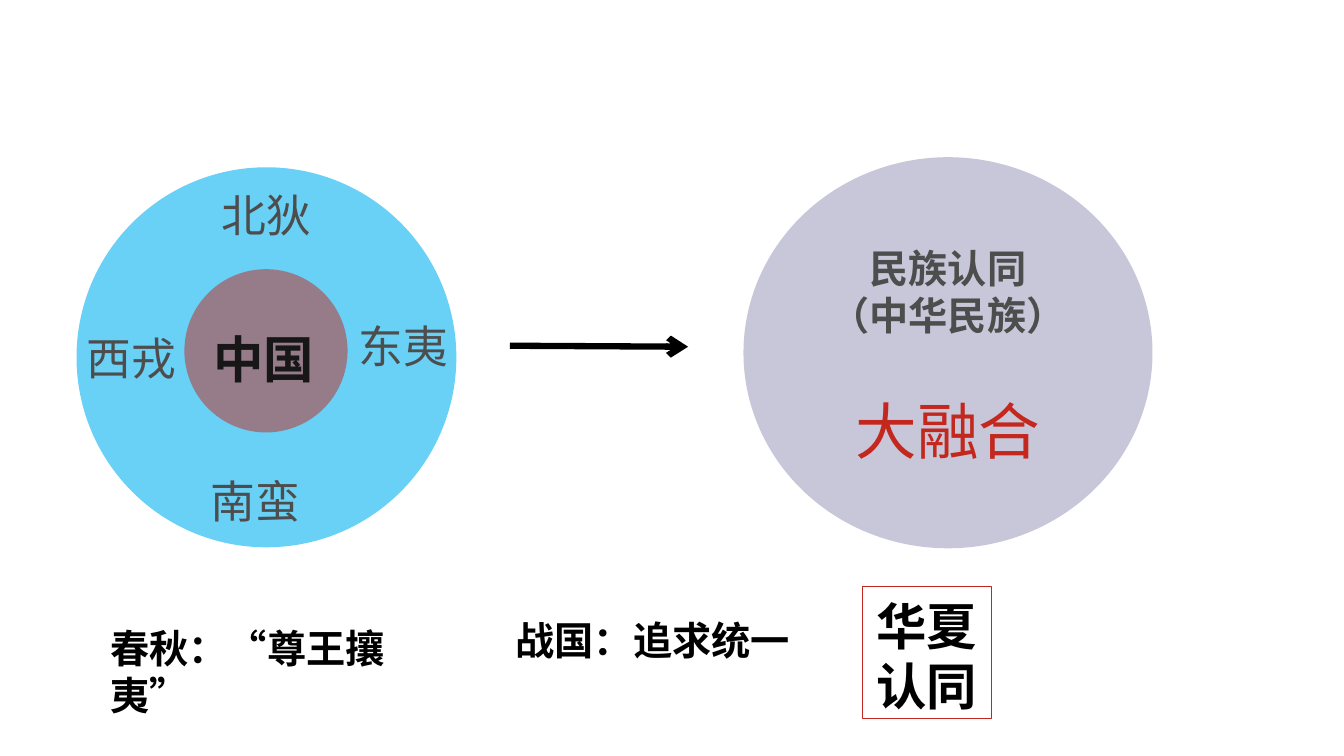
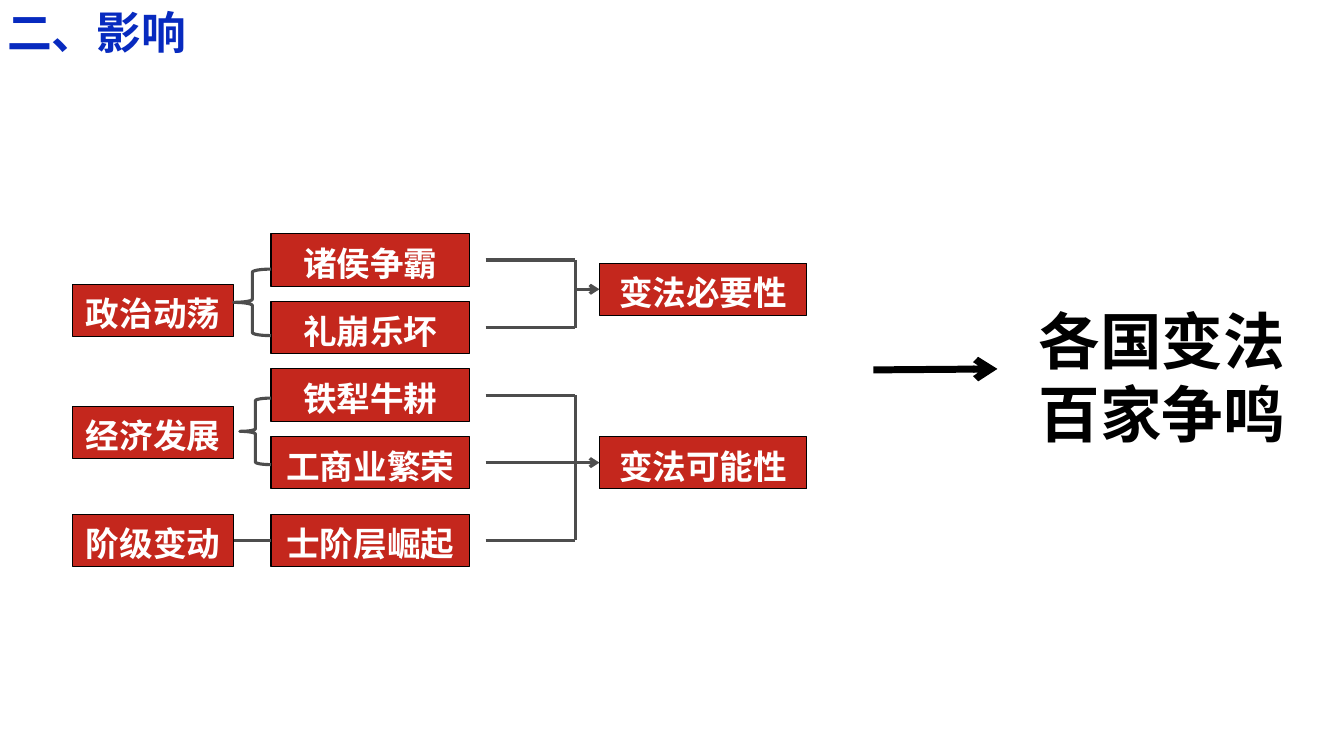
from dataclasses import dataclass

from lxml import etree
from pptx import Presentation
from pptx.dml.color import RGBColor
from pptx.enum.lang import MSO_LANGUAGE_ID
from pptx.enum.shapes import MSO_CONNECTOR, MSO_SHAPE
from pptx.enum.text import MSO_ANCHOR, MSO_AUTO_SIZE, PP_ALIGN
from pptx.oxml.ns import qn
from pptx.util import Inches, Pt

RECT, OVAL, BRACE = MSO_SHAPE.RECTANGLE, MSO_SHAPE.OVAL, MSO_SHAPE.LEFT_BRACE
STRAIGHT = MSO_CONNECTOR.STRAIGHT
LEFT, CENTER = PP_ALIGN.LEFT, PP_ALIGN.CENTER
TOP, MIDDLE = MSO_ANCHOR.TOP, MSO_ANCHOR.MIDDLE
FIXED = MSO_AUTO_SIZE.NONE
CHINESE = MSO_LANGUAGE_ID.SIMPLIFIED_CHINESE
LEFT_SIDE, RIGHT_SIDE = 1, 3


@dataclass(frozen=True)
class Theme:
    red: str = "C4271D"
    blue: str = "072ABF"
    sky: str = "00B0F0"
    lavender: str = "AAAAC6"
    gray: str = "4D4D4D"
    ink: str = "171717"
    black: str = "000000"
    white: str = "FFFFFF"
    cjk: str = "Noto Sans CJK SC"
    latin: str = "Arial"
    box: int = 24
    body: int = 28
    label: int = 32
    core: int = 36
    result: int = 44
    line_height: float = 1.2


THEME = Theme()

PERIODS = [
    ("春秋：“尊王攘夷”", (1, 6.11, 3.63, 1.05)),
    ("战国：追求统一", (5.02, 6.03, 2.99, 0.57)),
]
NEIGHBOURS = [
    ("北狄", 2.1, 1.78),
    ("东夷", 3.46, 3.08),
    ("南蛮", 1.99, 4.62),
    ("西戎", 0.76, 3.2),
]
CHANGES = [("政治动荡", 2.82), ("经济发展", 4.03), ("阶级变动", 5.1)]
FACTORS = [
    ("诸侯争霸", 2.32),
    ("礼崩乐坏", 2.99),
    ("铁犁牛耕", 3.66),
    ("工商业繁荣", 4.33),
    ("士阶层崛起", 5.1),
]
CONDITIONS = [
    ("变法必要性", 2.61, FACTORS[:2]),
    ("变法可能性", 4.33, FACTORS[2:]),
]
BRACES = [(2.32, 2.67, 0.37, 0.66), (2.38, 3.95, 0.31, 0.66)]
CHANGE_X, CHANGE_W = 0.72, 1.6
FACTOR_X, FACTOR_W = 2.69, 1.97
CONDITION_X, CONDITION_W = 5.95, 2.06
BOX_H = 0.52
BRANCH_X, BUS_X = 4.82, 5.71


def rgb(color):
    return RGBColor.from_string(color)


def write(shape, text, size=THEME.body, color=THEME.black, bold=True,
          font=THEME.cjk, align=LEFT, anchor=TOP, before=0, more=False):
    frame = shape.text_frame
    frame.word_wrap, frame.auto_size = True, FIXED
    frame.vertical_anchor = anchor
    frame.margin_left = frame.margin_right = Inches(0.1)
    frame.margin_top, frame.margin_bottom = Inches(0.08), Inches(0.02)
    for index, line in enumerate(text.split("\n")):
        first = index == 0 and not more
        paragraph = frame.paragraphs[0] if first else frame.add_paragraph()
        paragraph.alignment = align
        paragraph.line_spacing = Pt(round(size * THEME.line_height, 1))
        paragraph.space_before = Pt(before)
        run = paragraph.add_run()
        run.text = line
        run.font.size, run.font.bold = Pt(size), bold
        run.font.color.rgb = rgb(color)
        run.font.name = font
        run.font.language_id = CHINESE
        latin = run.font._element.find(qn("a:latin"))
        east_asian = etree.Element(qn("a:ea"), typeface=THEME.cjk)
        latin.addnext(east_asian)


def add_label(slide, text, place, **style):
    label = slide.shapes.add_textbox(*map(Inches, place))
    write(label, text, **style)


def add_block(slide, kind, place, fill=None, alpha=None, line=None, weight=1):
    block = slide.shapes.add_shape(kind, *map(Inches, place))
    block.shadow.inherit = False
    if fill:
        block.fill.solid()
        block.fill.fore_color.rgb = rgb(fill)
    else:
        block.fill.background()
    if alpha:
        color = block._element.spPr.find(".//" + qn("a:srgbClr"))
        etree.SubElement(color, qn("a:alpha"), val=str(alpha * 1000))
    if line:
        block.line.color.rgb = rgb(line)
        block.line.width = Pt(weight)
    else:
        block.line.fill.background()
    return block


def add_box(slide, text, left, top, width):
    box = add_block(slide, RECT, (left, top, width, BOX_H),
                    fill=THEME.red, line=THEME.black, weight=0.75)
    write(box, text, size=THEME.box, color=THEME.white,
          align=CENTER, anchor=MIDDLE)
    return box


def add_line(slide, start, end, color=THEME.gray, weight=2.25, arrow=False,
             source=None, target=None):
    line = slide.shapes.add_connector(STRAIGHT, *map(Inches, start + end))
    line.line.color.rgb = rgb(color)
    line.line.width = Pt(weight)
    if arrow:
        etree.SubElement(line.line._get_or_add_ln(), qn("a:tailEnd"), type="arrow")
    etree.SubElement(line._element.spPr, qn("a:effectLst"))
    if source:
        line.begin_connect(source, RIGHT_SIDE)
    if target:
        line.end_connect(target, LEFT_SIDE)


def build_fusion(deck):
    slide = deck.slides.add_slide(deck.slide_layouts[6])
    for text, place in PERIODS:
        add_label(slide, text, place)

    identity = add_block(slide, RECT, (8.56, 5.82, 1.28, 1.31), line=THEME.red)
    write(identity, "华夏认同", size=THEME.core, align=CENTER)

    nation = add_block(slide, OVAL, (7.38, 1.56, 4.06, 3.88),
                       fill=THEME.lavender, alpha=66)
    centered = dict(align=CENTER, anchor=MIDDLE)
    write(nation, "民族认同\n（中华民族）", color=THEME.gray, **centered)
    write(nation, "大融合", size=THEME.result, color=THEME.red, bold=False,
          before=39, more=True, **centered)

    add_block(slide, OVAL, (0.76, 1.66, 3.77, 3.77), fill=THEME.sky, alpha=59)
    add_block(slide, OVAL, (1.83, 2.67, 1.62, 1.62), fill=THEME.red, alpha=50)
    add_label(slide, "中国", (2.02, 3.17, 1.3, 0.71), size=THEME.core,
              color=THEME.ink, font=THEME.latin)
    for text, left, top in NEIGHBOURS:
        add_label(slide, text, (left, top, 1.2, 0.64), size=THEME.label,
                  color=THEME.gray, bold=False, font=THEME.latin)
    add_line(slide, (5.06, 3.43), (6.83, 3.44), color=THEME.black,
             weight=4.5, arrow=True)


def build_influence(deck):
    slide = deck.slides.add_slide(deck.slide_layouts[5])
    title = slide.shapes.title
    title.left, title.top, title.width, title.height = map(
        Inches, (-0.03, -0.03, 6.49, 0.64))
    write(title, "二、影响", size=THEME.label, color=THEME.blue, font=THEME.latin)

    changes = [add_box(slide, text, CHANGE_X, top, CHANGE_W)
               for text, top in CHANGES]
    factors = [add_box(slide, text, FACTOR_X, top, FACTOR_W)
               for text, top in FACTORS]
    for place in BRACES:
        add_block(slide, BRACE, place, line=THEME.gray, weight=2.25)
    class_y = CHANGES[-1][1] + BOX_H / 2
    add_line(slide, (CHANGE_X + CHANGE_W, class_y), (FACTOR_X, class_y),
             source=changes[-1], target=factors[-1])

    for text, top, causes in CONDITIONS:
        condition = add_box(slide, text, CONDITION_X, top, CONDITION_W)
        levels = [cause_top + BOX_H / 2 for _, cause_top in causes]
        for level in levels:
            add_line(slide, (BRANCH_X, level), (BUS_X, level))
        add_line(slide, (BUS_X, levels[0]), (BUS_X, levels[-1]))
        middle = top + BOX_H / 2
        add_line(slide, (BUS_X, middle), (CONDITION_X, middle),
                 arrow=True, target=condition)

    add_label(slide, "各国变法\n百家争鸣", (10.21, 2.92, 3.1, 1.58),
              size=THEME.result)
    add_line(slide, (8.67, 3.67), (9.9, 3.66), color=THEME.black,
             weight=5, arrow=True)


def main():
    deck = Presentation()
    deck.slide_width, deck.slide_height = Inches(13.34), Inches(7.5)
    build_fusion(deck)
    build_influence(deck)
    deck.save("out.pptx")


if __name__ == "__main__":
    main()
